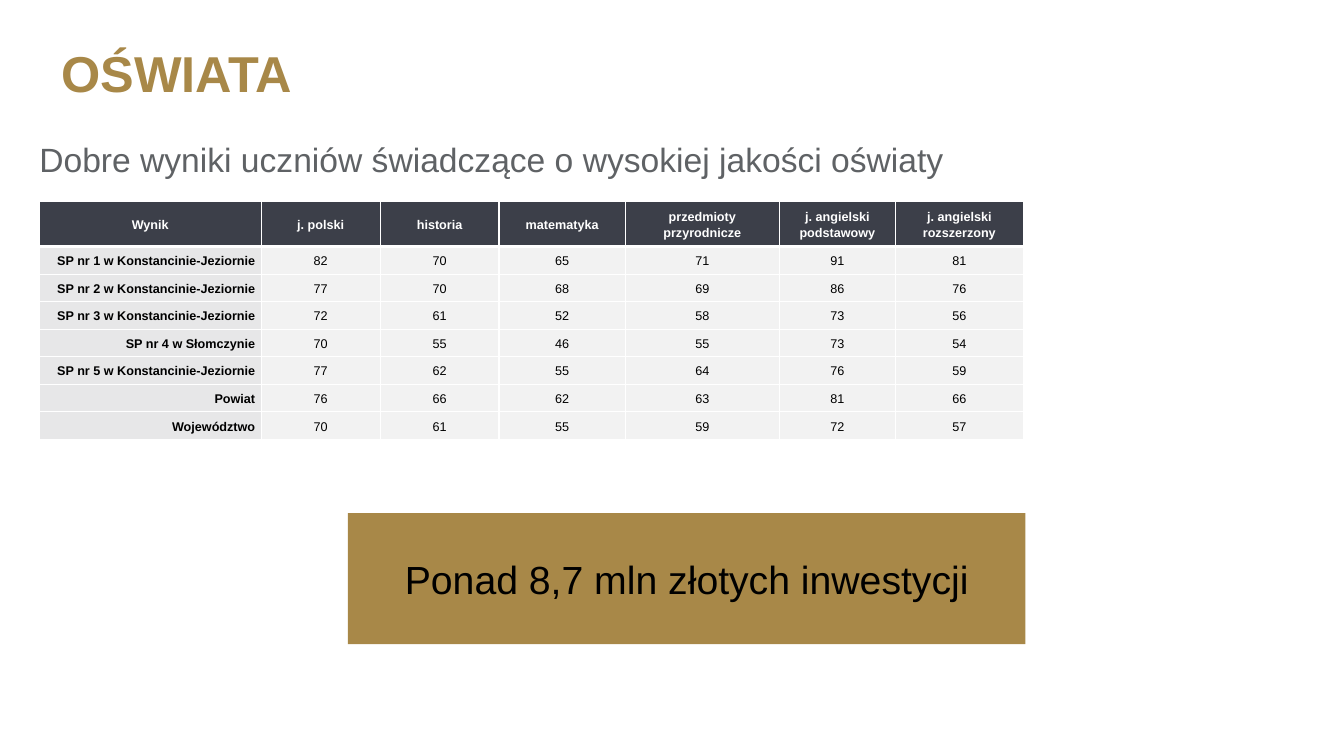
from dataclasses import dataclass

from lxml.etree import SubElement
from pptx import Presentation
from pptx.dml.color import RGBColor
from pptx.enum.shapes import MSO_SHAPE
from pptx.enum.text import MSO_ANCHOR, MSO_AUTO_SIZE, PP_ALIGN
from pptx.oxml.ns import qn
from pptx.util import Inches, Pt


@dataclass(frozen=True)
class Theme:
    font: str = "Arial"
    gold: str = "A88848"
    gray: str = "5F6265"
    header: str = "3C3F49"
    label: str = "E7E7E8"
    body: str = "F2F2F2"
    white: str = "FFFFFF"
    black: str = "000000"
    title_size: int = 36
    subtitle_size: int = 24
    callout_size: int = 28
    table_size: int = 9


theme = Theme()


def add_text(paragraph, text, size, color, bold=False, alignment=PP_ALIGN.CENTER):
    paragraph.alignment = alignment
    run = paragraph.add_run()
    run.text = text
    run.font.name = theme.font
    run.font.size = Pt(size)
    run.font.bold = bold
    run.font.color.rgb = RGBColor.from_string(color)


def add_border(cell, side, width):
    line = SubElement(cell._tc.get_or_add_tcPr(), qn(f"a:ln{side}"), w=str(Pt(width)))
    fill = SubElement(line, qn("a:solidFill"))
    SubElement(fill, qn("a:srgbClr"), val=theme.white)


presentation = Presentation()
presentation.slide_width = Inches(13.33)
presentation.slide_height = Inches(7.5)
slide = presentation.slides.add_slide(presentation.slide_layouts[6])

title = slide.shapes.add_textbox(Inches(0.5), Inches(0.37), Inches(2.51), Inches(1.16))
title.text_frame.word_wrap = False
title.text_frame.auto_size = MSO_AUTO_SIZE.SHAPE_TO_FIT_TEXT
add_text(title.text_frame.paragraphs[0], "OŚWIATA", theme.title_size, theme.gold, bold=True)

subtitle = slide.shapes.add_textbox(Inches(0.39), Inches(1.38), Inches(9.04), Inches(5.12))
subtitle_frame = subtitle.text_frame
subtitle_frame.word_wrap = True
subtitle_frame.margin_left = subtitle_frame.margin_right = Inches(0)
subtitle_frame.margin_top = subtitle_frame.margin_bottom = Inches(0)
add_text(
    subtitle_frame.paragraphs[0],
    "Dobre wyniki uczniów świadczące o wysokiej jakości oświaty",
    theme.subtitle_size,
    theme.gray,
    alignment=PP_ALIGN.LEFT,
)

results = [
    ("Wynik", "j. polski", "historia", "matematyka", "przedmioty przyrodnicze",
     "j. angielski podstawowy", "j. angielski rozszerzony"),
    ("SP nr 1 w Konstancinie-Jeziornie", 82, 70, 65, 71, 91, 81),
    ("SP nr 2 w Konstancinie-Jeziornie", 77, 70, 68, 69, 86, 76),
    ("SP nr 3 w Konstancinie-Jeziornie", 72, 61, 52, 58, 73, 56),
    ("SP nr 4 w Słomczynie", 70, 55, 46, 55, 73, 54),
    ("SP nr 5 w Konstancinie-Jeziornie", 77, 62, 55, 64, 76, 59),
    ("Powiat", 76, 66, 62, 63, 81, 66),
    ("Województwo", 70, 61, 55, 59, 72, 57),
]
column_widths = [2.2, 1.18, 1.18, 1.25, 1.53, 1.15, 1.27]
table_height = Inches(2.31)

table_shape = slide.shapes.add_table(
    len(results), len(column_widths), Inches(0.39), Inches(2), Inches(9.77), table_height
)
table = table_shape.table
table.horz_banding = False
for column, width in zip(table.columns, column_widths):
    column.width = Inches(width)
for row in table.rows:
    row.height = Inches(0.21)
table_shape.height = table_height

for row_index, values in enumerate(results):
    for column_index, value in enumerate(values):
        is_header = row_index == 0
        is_label = column_index == 0 and not is_header
        cell = table.cell(row_index, column_index)
        cell.vertical_anchor = MSO_ANCHOR.MIDDLE
        cell.margin_left = cell.margin_right = Inches(0.06)
        cell.margin_top = cell.margin_bottom = Inches(0.05)
        for side in "LRTB":
            header_edge = (side == "B" and is_header) or (side == "T" and row_index == 1)
            add_border(cell, side, 3 if header_edge else 1)
        fill_color = theme.header if is_header else theme.label if is_label else theme.body
        cell.fill.solid()
        cell.fill.fore_color.rgb = RGBColor.from_string(fill_color)
        paragraph = cell.text_frame.paragraphs[0]
        paragraph.line_spacing = 1.15
        add_text(
            paragraph,
            str(value),
            theme.table_size,
            theme.white if is_header else theme.black,
            bold=is_header or is_label,
            alignment=PP_ALIGN.RIGHT if is_label else PP_ALIGN.CENTER,
        )

callout = slide.shapes.add_shape(
    MSO_SHAPE.RECTANGLE, Inches(3.45), Inches(5.09), Inches(6.72), Inches(1.3)
)
callout.shadow.inherit = False
callout.fill.solid()
callout.fill.fore_color.rgb = RGBColor.from_string(theme.gold)
callout.line.fill.background()
callout.text_frame.word_wrap = True
callout.text_frame.vertical_anchor = MSO_ANCHOR.MIDDLE
add_text(
    callout.text_frame.paragraphs[0],
    "Ponad 8,7 mln złotych inwestycji",
    theme.callout_size,
    theme.black,
)

presentation.save("out.pptx")
